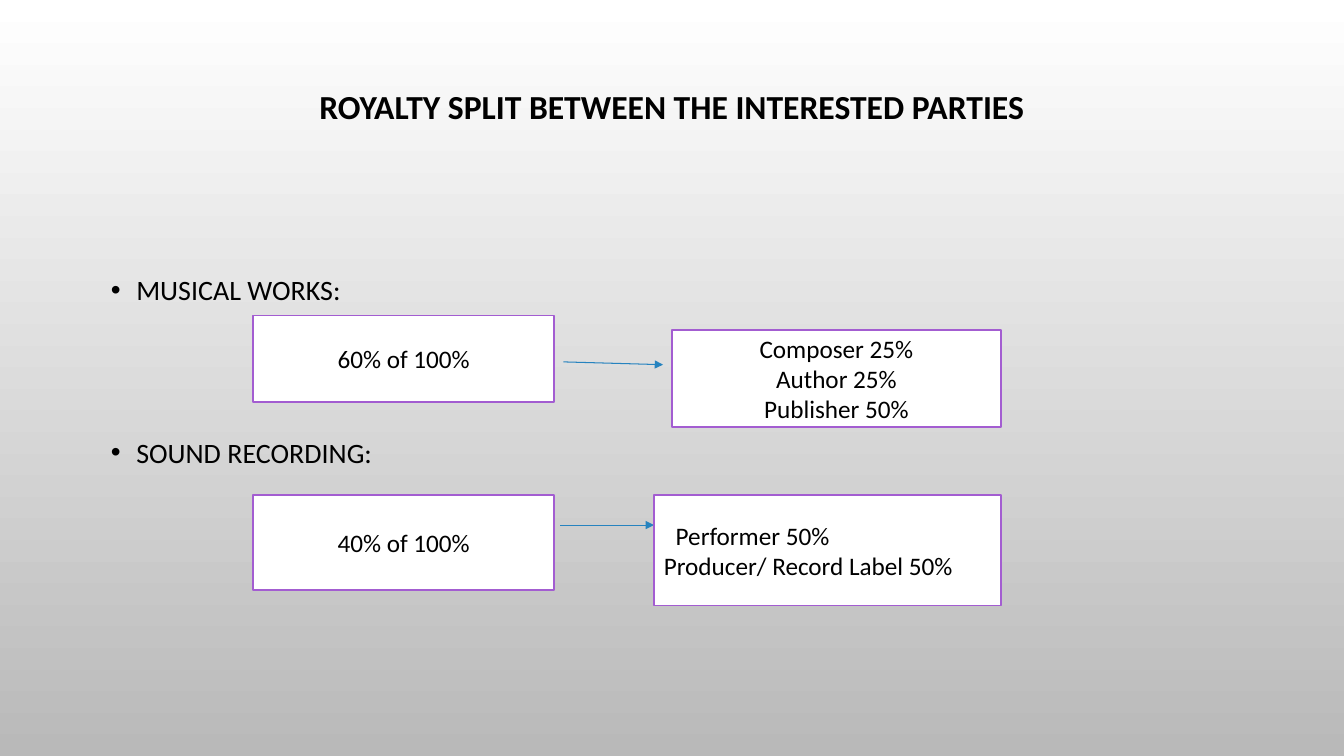
import pptx
import pptx.util
import pptx.dml.color
import pptx.enum.shapes
import pptx.enum.text
import pptx.oxml
import pptx.oxml.ns
from dataclasses import dataclass
from lxml import etree

Cm, Pt = pptx.util.Cm, pptx.util.Pt
Align = pptx.enum.text.PP_ALIGN
Anchor = pptx.enum.text.MSO_ANCHOR
qn = pptx.oxml.ns.qn


def rgb(code):
    return pptx.dml.color.RGBColor.from_string(code)


@dataclass
class Theme:
    font: str = "Calibri"
    ink: str = "000000"
    paper: str = "FFFFFF"
    shade: str = "B9B9B9"
    edge: str = "A35DD1"
    arrow: str = "2683BF"
    head: int = 24
    list: int = 20
    label: int = 18


class Page:
    def __init__(self, deck, theme):
        self.theme = theme
        self.slide = deck.slides.add_slide(deck.slide_layouts[1])

    def back(self):
        fill = self.slide.background.fill
        fill.gradient()
        fill.gradient_angle = 270
        for stop, code in zip(fill.gradient_stops, (self.theme.paper, self.theme.shade)):
            stop.color.rgb = rgb(code)

    def place(self, shape, left, top, width, height):
        shape.left, shape.top = Cm(left), Cm(top)
        shape.width, shape.height = Cm(width), Cm(height)

    def add_text(self, para, text, size, bold=False):
        run = para.add_run()
        run.text = text
        run.font.name = self.theme.font
        run.font.size = Pt(size)
        run.font.bold = bold
        run.font.color.rgb = rgb(self.theme.ink)

    def title(self, text, *area):
        shape = self.slide.shapes.title
        self.place(shape, *area)
        frame = shape.text_frame
        frame.auto_size = pptx.enum.text.MSO_AUTO_SIZE.NONE
        frame.vertical_anchor = Anchor.MIDDLE
        para = frame.paragraphs[0]
        para.alignment, para.line_spacing = Align.CENTER, 0.9
        self.add_text(para, text, self.theme.head, True)

    def bullets(self, items, gap, *area):
        shape = self.slide.placeholders[1]
        self.place(shape, *area)
        frame = shape.text_frame
        frame.auto_size = pptx.enum.text.MSO_AUTO_SIZE.NONE
        frame.vertical_anchor = Anchor.TOP
        for i, item in enumerate(items):
            para = frame.add_paragraph() if i else frame.paragraphs[0]
            props = para._p.get_or_add_pPr()
            props.set("marL", str(Cm(0.64)))
            props.set("indent", str(-Cm(0.64)))
            tint = etree.SubElement(props, qn("a:buClr"))
            etree.SubElement(tint, qn("a:srgbClr"), val=self.theme.ink)
            etree.SubElement(props, qn("a:buFont"), typeface="Arial")
            etree.SubElement(props, qn("a:buChar"), char="•")
            para.line_spacing = 1.2
            para.space_before = Pt(gap if i else 0)
            self.add_text(para, item, self.theme.list)

    def box(self, lines, left, top, width, height, align=Align.CENTER, shifts=()):
        shape = self.slide.shapes.add_shape(
            pptx.enum.shapes.MSO_SHAPE.RECTANGLE, Cm(left), Cm(top), Cm(width), Cm(height))
        shape.shadow.inherit = False
        shape.fill.solid()
        shape.fill.fore_color.rgb = rgb(self.theme.paper)
        shape.line.color.rgb = rgb(self.theme.edge)
        shape.line.width = Pt(1.25)
        frame = shape.text_frame
        frame.word_wrap = True
        frame.vertical_anchor = Anchor.MIDDLE
        for i, line in enumerate(lines):
            para = frame.add_paragraph() if i else frame.paragraphs[0]
            para.alignment = align
            if i < len(shifts):
                para._p.get_or_add_pPr().set("marL", str(Cm(shifts[i])))
            self.add_text(para, line, self.theme.label)

    def arrow(self, *ends):
        line = self.slide.shapes.add_connector(
            pptx.enum.shapes.MSO_CONNECTOR.STRAIGHT, *map(Cm, ends))
        line.line.color.rgb = rgb(self.theme.arrow)
        line.line.width = Pt(0.75)
        etree.SubElement(line.line._get_or_add_ln(), qn("a:tailEnd"), type="triangle")
        etree.SubElement(line._element.spPr, qn("a:effectLst"))


def main():
    deck = pptx.Presentation()
    deck.slide_width, deck.slide_height = Cm(33.87), Cm(19.05)
    page = Page(deck, Theme())

    # Background, title and list
    page.back()
    page.title("ROYALTY SPLIT BETWEEN THE INTERESTED PARTIES", 2.54, 1.73, 28.78, 2)
    page.bullets(["MUSICAL WORKS:", "SOUND RECORDING:"], 87, 2.54, 6.58, 28.78, 9.5)

    # Musical works: share and its split
    page.box(["60% of 100%"], 6.38, 7.95, 7.59, 2.18)
    page.arrow(14.2, 9.12, 16.71, 9.19)
    page.box(["Composer 25%", "Author 25%", "Publisher 50%"], 16.94, 8.31, 8.28, 2.46)

    # Sound recording: share and its split
    page.box(["40% of 100%"], 6.38, 12.47, 7.59, 2.39)
    page.arrow(14.12, 13.23, 16.48, 13.23)
    page.box(["Performer 50%", "Producer/ Record Label 50%"],
             16.48, 12.47, 8.74, 2.79, Align.LEFT, (0.3,))

    deck.save("out.pptx")


if __name__ == "__main__":
    main()
